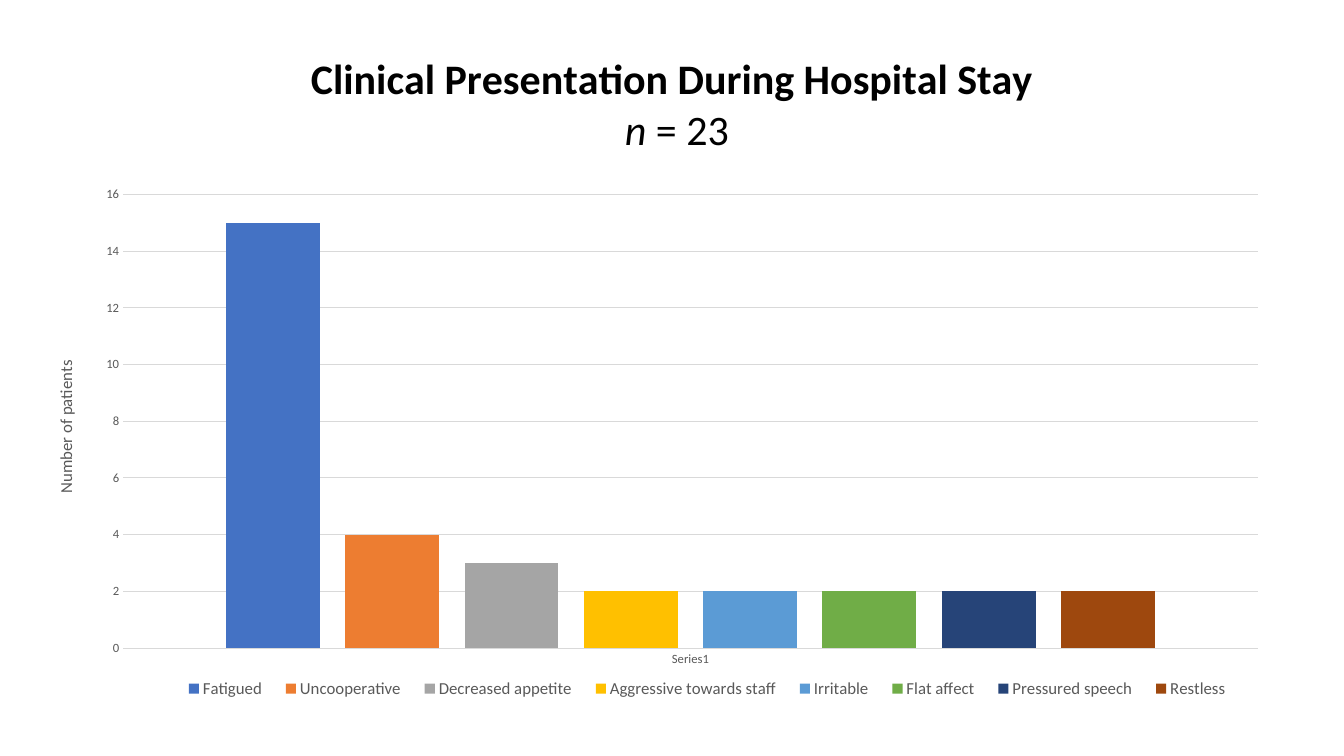
import pptx
import pptx.chart.data
import pptx.dml.color
import pptx.enum.chart
import pptx.util
from dataclasses import dataclass
from lxml import etree
from pptx.util import Inches


@dataclass(frozen=True)
class Theme:
    font: str = "Calibri"
    title_color: str = "000000"
    text_color: str = "595959"
    line_color: str = "D9D9D9"
    title_size: int = 30
    label_size: int = 12
    tick_size: int = 9


THEME = Theme()
SYMPTOMS = [
    ("Fatigued", 15, "4472C4"),
    ("Uncooperative", 4, "ED7D31"),
    ("Decreased appetite", 3, "A5A5A5"),
    ("Aggressive towards staff", 2, "FFC000"),
    ("Irritable", 2, "5B9BD5"),
    ("Flat affect", 2, "70AD47"),
    ("Pressured speech", 2, "264478"),
    ("Restless", 2, "9E480E"),
]


def rgb(value):
    return pptx.dml.color.RGBColor.from_string(value)


def set_font(font, size, color, bold=False):
    font.name = THEME.font
    font.size = pptx.util.Pt(size)
    font.bold = bold
    font.color.rgb = rgb(color)


def set_line(line):
    line.color.rgb = rgb(THEME.line_color)
    line.width = pptx.util.Pt(0.75)


def set_layout(parent, index, inner=False, **fractions):
    """Place a chart part by fractions of the chart's box."""
    ns = parent.nsmap["c"]
    for old in parent.findall(f"{{{ns}}}layout"):
        parent.remove(old)
    layout = etree.Element(f"{{{ns}}}layout")
    manual = etree.SubElement(layout, f"{{{ns}}}manualLayout")
    settings = [("layoutTarget", "inner")] if inner else []
    settings += [("xMode", "edge"), ("yMode", "edge")]
    settings += list(fractions.items())
    for tag, value in settings:
        etree.SubElement(manual, f"{{{ns}}}{tag}").set("val", str(value))
    parent.insert(index, layout)


def add_title(chart):
    tf = chart.chart_title.text_frame
    p = tf.paragraphs[0]
    p.text = "Clinical Presentation During Hospital Stay "
    set_font(p.font, THEME.title_size, THEME.title_color, bold=True)
    p = tf.add_paragraph()
    set_font(p.font, THEME.title_size, THEME.title_color)
    for text, italic in (("n", True), (" = 23", False)):
        r = p.add_run()
        r.text = text
        set_font(r.font, THEME.title_size, THEME.title_color)
        r.font.italic = italic
    chart.chart_title.include_in_layout = False
    set_layout(chart.chart_title._element, 1, x=0.22, y=0.01)


def format_axes(chart):
    for axis in (chart.category_axis, chart.value_axis):
        axis.major_tick_mark = pptx.enum.chart.XL_TICK_MARK.NONE
        axis.minor_tick_mark = pptx.enum.chart.XL_TICK_MARK.NONE
        set_font(axis.tick_labels.font, THEME.tick_size, THEME.text_color)
    set_line(chart.category_axis.format.line)

    axis = chart.value_axis
    axis.minimum_scale, axis.maximum_scale, axis.major_unit = 0, 16, 2
    axis.format.line.fill.background()
    axis.has_major_gridlines = True
    set_line(axis.major_gridlines.format.line)
    p = axis.axis_title.text_frame.paragraphs[0]
    p.text = "Number of patients"
    set_font(p.font, THEME.label_size, THEME.text_color)


def add_legend(chart):
    chart.has_legend = True
    legend = chart.legend
    legend.position = pptx.enum.chart.XL_LEGEND_POSITION.BOTTOM
    legend.include_in_layout = False
    set_font(legend.font, THEME.label_size, THEME.text_color)
    set_layout(legend._element, 1, x=0.11, y=0.94, w=0.86, h=0.04)


def add_symptom_chart(s, left, top, width, height):
    data = pptx.chart.data.CategoryChartData()
    data.categories = ["Series1"]
    for name, count, _ in SYMPTOMS:
        data.add_series(name, [count])
    chart = s.shapes.add_chart(
        pptx.enum.chart.XL_CHART_TYPE.COLUMN_CLUSTERED,
        left, top, width, height, data).chart
    set_font(chart.font, 10, THEME.title_color)

    # Columns
    plot = chart.plots[0]
    plot.vary_by_categories = False
    plot.gap_width, plot.overlap = 219, -27
    for series, (_, _, color) in zip(plot.series, SYMPTOMS):
        series.format.fill.solid()
        series.format.fill.fore_color.rgb = rgb(color)
    set_layout(chart._chartSpace.chart.plotArea, 0, inner=True,
               x=0.072, y=0.226, w=0.909, h=0.674)

    # Title, axes and legend
    add_title(chart)
    format_axes(chart)
    add_legend(chart)


def main():
    prs = pptx.Presentation()
    prs.slide_width, prs.slide_height = Inches(13.33), Inches(7.5)
    s = prs.slides.add_slide(prs.slide_layouts[6])
    add_symptom_chart(s, Inches(0.33), Inches(0.42), Inches(12.38), Inches(6.68))
    prs.save("out.pptx")


if __name__ == "__main__":
    main()
